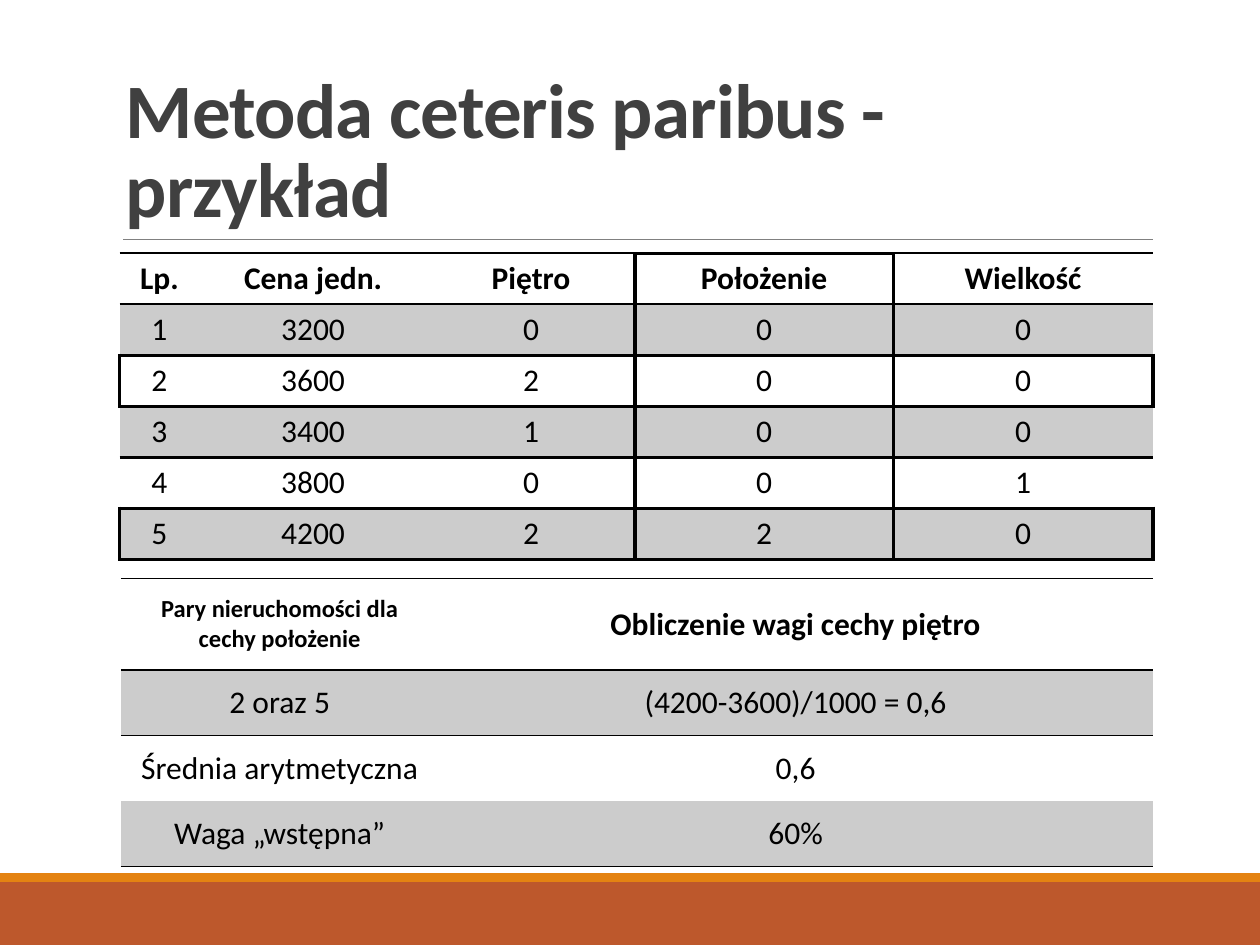
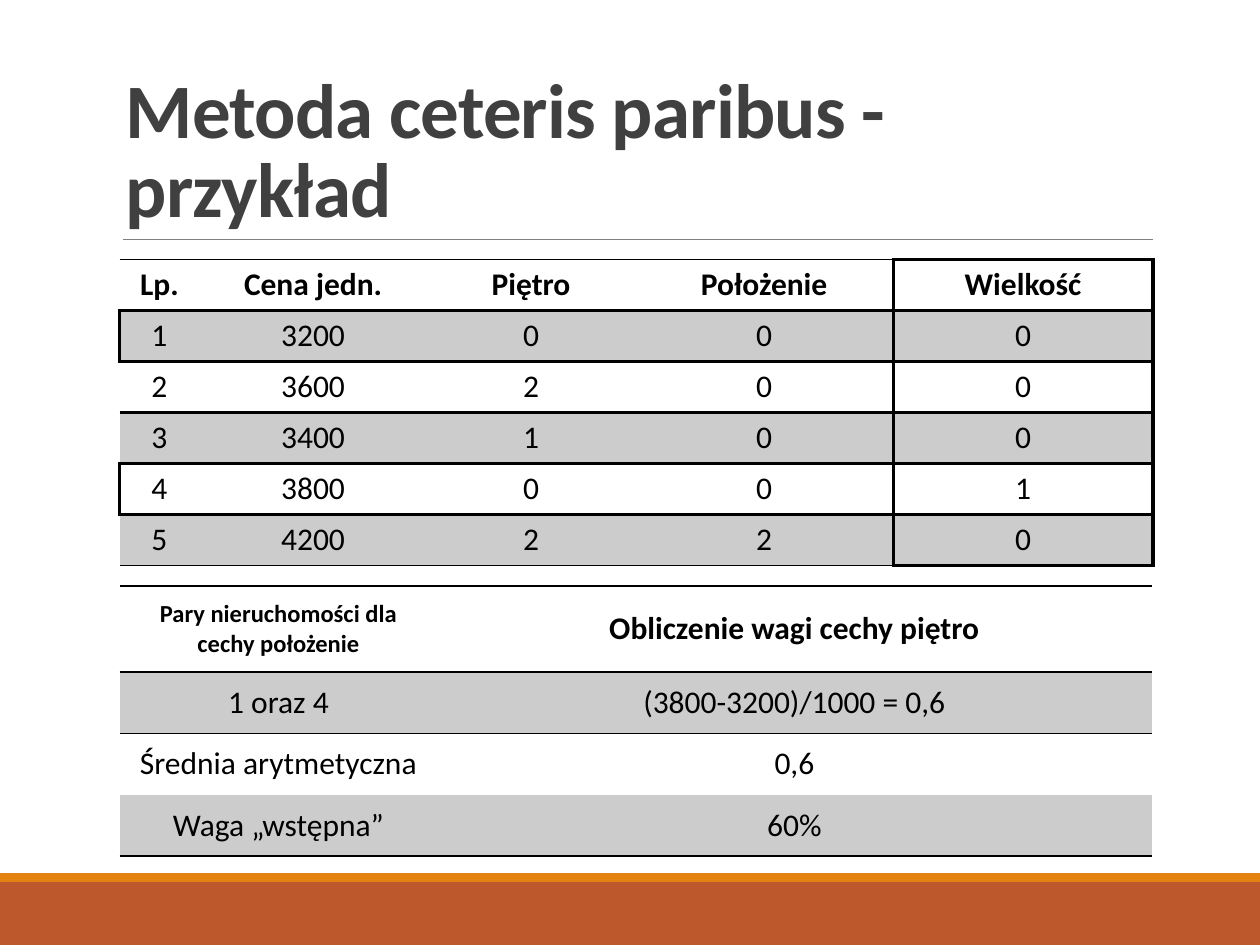
from dataclasses import dataclass
from itertools import product

from lxml.etree import SubElement
from pptx import Presentation
from pptx.dml.color import RGBColor
from pptx.enum.shapes import MSO_CONNECTOR, MSO_SHAPE
from pptx.enum.text import MSO_ANCHOR, PP_ALIGN
from pptx.oxml import parse_xml
from pptx.oxml.ns import nsdecls, qn
from pptx.util import Inches, Pt

SLIDE_W, SLIDE_H = Inches(10), Inches(7.5)
FONT = "Calibri"
INK, TITLE_GREY, RULE_GREY = "000000", "404040", "808080"
STRIPE, RUST, ORANGE = "CCCCCC", "BD582C", "E48312"
THIN, HEAVY = 1, 2.25
PLAIN_TABLE_STYLE = "{2D5ABB26-0587-4C30-8999-92F81FD0307C}"

TITLE = "Metoda ceteris paribus - przykład"
FLATS = [
    ["Lp.", "Cena jedn.", "Piętro", "Położenie", "Wielkość"],
    ["1", "3200", "0", "0", "0"],
    ["2", "3600", "2", "0", "0"],
    ["3", "3400", "1", "0", "0"],
    ["4", "3800", "0", "0", "1"],
    ["5", "4200", "2", "2", "0"],
]
FLAT_COLUMNS = [0.63, 1.81, 1.65, 2.05, 2.06]
WEIGHT_COLUMNS, WEIGHT_ROWS = [2.52, 5.67], [1.4, 1, 1, 1]


@dataclass
class Box:
    """Area given in percent of the slide's width and height."""
    left: float
    top: float
    width: float
    height: float

    def emu(self):
        """Return the area in slide units."""
        return (across(self.left), down(self.top),
                across(self.width), down(self.height))


def across(percent):
    """Turn a percentage of the slide's width into a length."""
    return int(SLIDE_W * percent / 100)


def down(percent):
    """Turn a percentage of the slide's height into a length."""
    return int(SLIDE_H * percent / 100)


def colour(value):
    """Turn a hex string into a colour."""
    return RGBColor.from_string(value)


def add_run(paragraph, text, size, ink, bold):
    """Add one styled run and return it."""
    run = paragraph.add_run()
    run.text = text
    run.font.name, run.font.size, run.font.bold = FONT, Pt(size), bold
    run.font.color.rgb = colour(ink)
    return run


def add_band(slide, box, fill):
    """Add a plain strip."""
    band = slide.shapes.add_shape(MSO_SHAPE.RECTANGLE, *box.emu())
    band.shadow.inherit = False
    band.fill.solid()
    band.fill.fore_color.rgb = colour(fill)
    band.line.fill.background()


def add_footer(slide):
    """Add the two strips at the foot of the slide."""
    add_band(slide, Box(0, 93.33, 100, 6.67), RUST)
    add_band(slide, Box(0, 92.4, 100, 0.93), ORANGE)


def add_title(slide, box):
    """Add the title and the rule that closes its box."""
    base = down(box.top + box.height)
    rule = slide.shapes.add_connector(
        MSO_CONNECTOR.STRAIGHT, across(box.left + 0.8), base,
        across(box.left + box.width), base)
    rule.line.color.rgb = colour(RULE_GREY)
    rule.line.width = Pt(0.5)
    SubElement(rule._element.spPr, qn("a:effectLst"))
    frame = slide.shapes.add_textbox(*box.emu()).text_frame
    frame.word_wrap = True
    frame.vertical_anchor = MSO_ANCHOR.BOTTOM
    heading = frame.paragraphs[0]
    heading.line_spacing = 0.85
    run = add_run(heading, TITLE, 44, TITLE_GREY, True)
    run._r.get_or_add_rPr().set("spc", "-50")


def set_borders(cell, widths):
    """Draw the cell's sides, given as a side letter to width mapping."""
    properties = cell._tc.get_or_add_tcPr()
    drawn = [side for side in "LRTB" if widths.get(side)]
    for place, side in enumerate(drawn):
        properties.insert(place, parse_xml(
            f'<a:ln{side} {nsdecls("a")} w="{int(Pt(widths[side]))}">'
            f'<a:solidFill><a:srgbClr val="{INK}"/></a:solidFill></a:ln{side}>'))


def fill_cell(cell, text, size, bold, striped):
    """Write centred lines in a cell and set its background."""
    cell.vertical_anchor = MSO_ANCHOR.MIDDLE
    if striped:
        cell.fill.solid()
        cell.fill.fore_color.rgb = colour(STRIPE)
    else:
        cell.fill.background()
    for number, line in enumerate(text.split("\n")):
        frame = cell.text_frame
        paragraph = frame.add_paragraph() if number else frame.paragraphs[0]
        paragraph.alignment = PP_ALIGN.CENTER
        add_run(paragraph, line, size, INK, bold)


def add_striped_table(slide, box, rows, column_shares, row_shares, borders):
    """Add a table with a bold header, striped odd rows and ruled cells."""
    table = slide.shapes.add_table(len(rows), len(rows[0]), *box.emu()).table
    table.first_row = table.horz_banding = False
    table._tbl.tblPr.find(qn("a:tableStyleId")).text = PLAIN_TABLE_STYLE
    for column, share in zip(table.columns, column_shares):
        column.width = int(across(box.width) * share / sum(column_shares))
    for row, share in zip(table.rows, row_shares):
        row.height = int(down(box.height) * share / sum(row_shares))
    for row, column in product(range(len(rows)), range(len(rows[0]))):
        cell, text = table.cell(row, column), rows[row][column]
        fill_cell(cell, text, 14 if "\n" in text else 18, row == 0, row % 2 == 1)
        set_borders(cell, borders(row, column))


def add_flats(slide, box, focus, pair):
    """Add the flats table, framing one feature column and a pair of rows."""
    last = len(FLATS)

    def horizontal(edge, column):
        """Width of the line above row number edge."""
        framed = column == focus and edge in (0, last)
        paired = edge in pair or edge - 1 in pair
        return HEAVY if framed or paired or edge not in (0, 1, last) else THIN

    def vertical(row, edge):
        """Width of the line left of column number edge."""
        outer = edge in (0, len(FLAT_COLUMNS)) and row in pair
        return HEAVY if outer or edge in (focus, focus + 1) else 0

    def borders(row, column):
        """Widths of the four sides of a cell."""
        return {"L": vertical(row, column), "R": vertical(row, column + 1),
                "T": horizontal(row, column), "B": horizontal(row + 1, column)}

    add_striped_table(slide, box, FLATS, FLAT_COLUMNS, [1] * last, borders)


def add_weight(slide, box, pair):
    """Add the table that works out the feature's weight from the pair."""
    first, second = pair
    low, high = FLATS[first][1], FLATS[second][1]
    rows = [
        ["Pary nieruchomości dla\ncechy położenie", "Obliczenie wagi cechy piętro"],
        [f"{first} oraz {second}", f"({high}-{low})/1000 = 0,6"],
        ["Średnia arytmetyczna", "0,6"],
        ["Waga „wstępna”", "60%"],
    ]

    def borders(row, column):
        """Rule off the header and the last row."""
        return {"T": THIN if row in (0, 1) else 0,
                "B": THIN if row in (0, len(rows) - 1) else 0}

    add_striped_table(slide, box, rows, WEIGHT_COLUMNS, WEIGHT_ROWS, borders)


def add_example(deck, focus, pair, flats_box, weight_box):
    """Add one worked example slide."""
    slide = deck.slides.add_slide(deck.slide_layouts[6])
    add_footer(slide)
    add_title(slide, Box(9, 4.13, 82.5, 21.2))
    add_flats(slide, flats_box, focus, pair)
    add_weight(slide, weight_box, pair)


def main():
    """Build the deck and save it."""
    deck = Presentation()
    deck.slide_width, deck.slide_height = SLIDE_W, SLIDE_H
    add_example(deck, FLATS[0].index("Położenie"), (2, 5),
                Box(9.5, 26.8, 82, 32.4), Box(9.6, 61.2, 81.9, 30.53))
    add_example(deck, FLATS[0].index("Wielkość"), (1, 4),
                Box(9.5, 27.47, 82, 32.4), Box(9.5, 62, 81.9, 28.6))
    deck.save("out.pptx")


if __name__ == "__main__":
    main()
